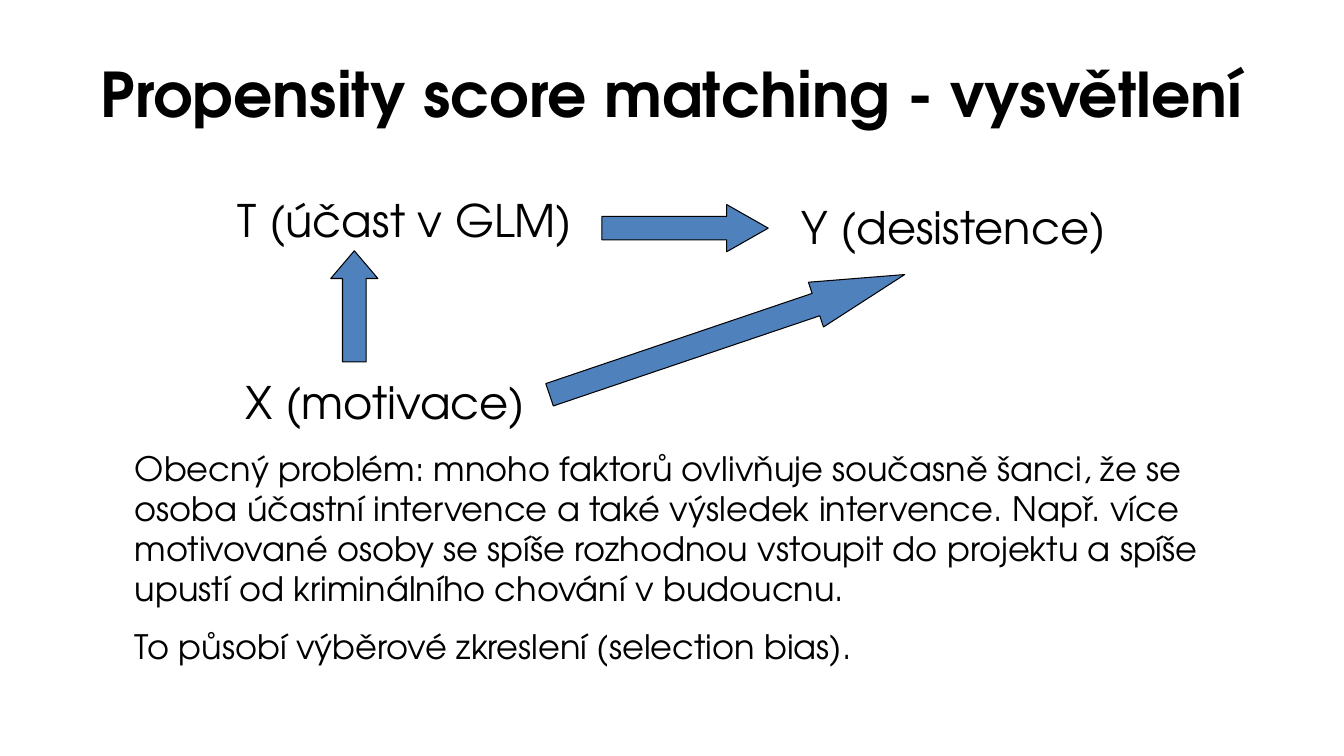
from dataclasses import dataclass
from math import atan2, degrees, hypot

from lxml.etree import SubElement
from pptx import Presentation
from pptx.dml.color import RGBColor
from pptx.enum.shapes import MSO_SHAPE
from pptx.enum.text import MSO_ANCHOR, MSO_AUTO_SIZE, PP_ALIGN
from pptx.oxml.ns import qn
from pptx.util import Cm, Pt


@dataclass(frozen=True)
class Theme:
    font: str = "TeX Gyre Adventor"
    ink: RGBColor = RGBColor(0, 0, 0)
    blue: RGBColor = RGBColor(0x4F, 0x81, 0xBD)
    title: int = 44
    label: int = 32
    note: int = 24
    line: float = 0.75


def write(frame, text, theme, size, bold=False, align=PP_ALIGN.LEFT,
          anchor=MSO_ANCHOR.TOP, gap=0):
    """Fill a frame, one paragraph per line; gap is the space between them."""
    frame.text = text
    frame.word_wrap = True
    frame.auto_size = MSO_AUTO_SIZE.NONE
    frame.vertical_anchor = anchor
    for i, para in enumerate(frame.paragraphs):
        para.alignment = align
        para.space_before = Pt(gap if i else 0)
        font = para.runs[0].font
        font.name, font.size, font.bold = theme.font, Pt(size), bold
        font.color.rgb = theme.ink


class Deck:
    def __init__(self, theme):
        self.theme = theme
        self.prs = Presentation()
        self.prs.slide_width, self.prs.slide_height = Cm(33.87), Cm(19.05)
        self.slide = self.prs.slides.add_slide(self.prs.slide_layouts[1])

    def place(self, shape, box):
        shape.left, shape.top, shape.width, shape.height = map(Cm, box)

    def title(self, text, box):
        shape = self.slide.shapes.title
        self.place(shape, box)
        write(shape.text_frame, text, self.theme, self.theme.title, bold=True,
              align=PP_ALIGN.CENTER, anchor=MSO_ANCHOR.MIDDLE)

    def body(self, text, box):
        shape = self.slide.placeholders[1]
        self.place(shape, box)
        write(shape.text_frame, text, self.theme, self.theme.label)
        for para in shape.text_frame.paragraphs:
            props = para._p.get_or_add_pPr()
            props.set("marL", str(Cm(0.95)))
            props.set("indent", str(-Cm(0.95)))
            SubElement(props, qn("a:buNone"))

    def text(self, text, box, size, **style):
        shape = self.slide.shapes.add_textbox(*map(Cm, box))
        write(shape.text_frame, text, self.theme, size, **style)

    def arrow(self, tail, tip, width=1.19):
        """Block arrow between two points; its head is a quarter of its length."""
        dx, dy = tip[0] - tail[0], tip[1] - tail[1]
        size = hypot(dx, dy)
        left = (tail[0] + tip[0] - width) / 2
        top = (tail[1] + tip[1] - size) / 2
        shape = self.slide.shapes.add_shape(
            MSO_SHAPE.UP_ARROW, Cm(left), Cm(top), Cm(width), Cm(size))
        shape.adjustments[0] = 0.5
        shape.adjustments[1] = size / 4 / width
        shape.rotation = degrees(atan2(dx, -dy))
        shape.shadow.inherit = False
        shape.fill.solid()
        shape.fill.fore_color.rgb = self.theme.blue
        shape.line.color.rgb = self.theme.ink
        shape.line.width = Pt(self.theme.line)


def main():
    theme = Theme()
    deck = Deck(theme)
    deck.title("Propensity score matching - vysvětlení", (1.7, 0.76, 30.48, 3.18))

    deck.text("X (motivace)", (5.94, 9.32, 8.2, 1.63), theme.label)
    deck.body("Y (desistence)", (19.94, 4.9, 10.03, 2.69))
    deck.text("T (účast v GLM)", (5.74, 4.72, 9.8, 1.63), theme.label)

    deck.arrow((8.93, 9.12), (8.93, 6.32))
    deck.arrow((15.17, 5.75), (19.36, 5.75))
    deck.arrow((13.85, 9.95), (22.8, 6.92))

    deck.text(
        "Obecný problém: mnoho faktorů ovlivňuje současně šanci, že se osoba "
        "účastní intervence a také výsledek intervence. Např. více motivované "
        "osoby se spíše rozhodnou vstoupit do projektu a spíše upustí od "
        "kriminálního chování v budoucnu.\n"
        "To působí výběrové zkreslení (selection bias).",
        (3.15, 11.15, 28.19, 5.89), theme.note, gap=12)
    deck.prs.save("out.pptx")


if __name__ == "__main__":
    main()
